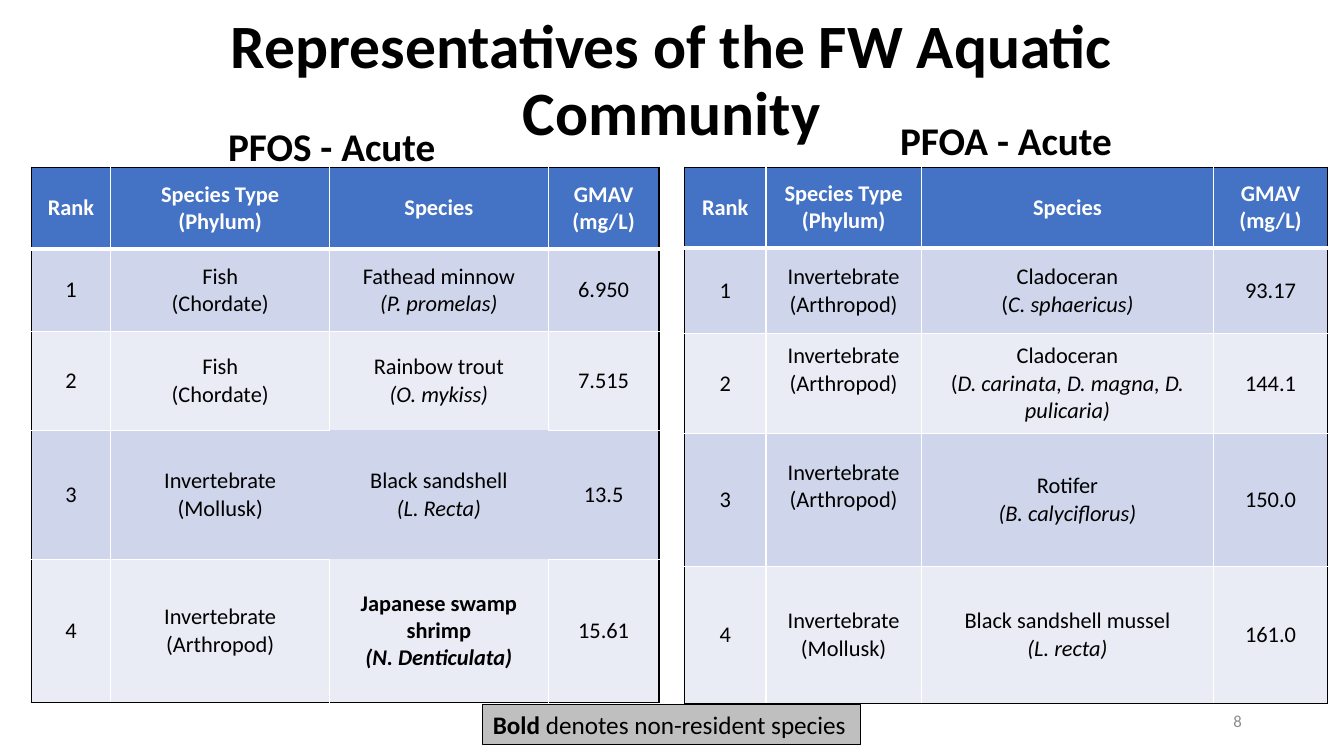
"""Build the slide comparing acute PFOS and PFOA values for freshwater species."""
from dataclasses import dataclass

from lxml import etree
from pptx import Presentation
from pptx.dml.color import RGBColor
from pptx.enum.shapes import MSO_SHAPE
from pptx.enum.text import MSO_ANCHOR, PP_ALIGN
from pptx.oxml.ns import qn
from pptx.util import Pt

LEFT, CENTER, RIGHT = PP_ALIGN.LEFT, PP_ALIGN.CENTER, PP_ALIGN.RIGHT
TOP, MIDDLE = MSO_ANCHOR.TOP, MSO_ANCHOR.MIDDLE
RECT = MSO_SHAPE.RECTANGLE


@dataclass(frozen=True)
class Theme:
    font: str = "Calibri"
    black: str = "000000"
    white: str = "FFFFFF"
    header: str = "4472C4"
    bands: tuple = ("E9EBF5", "CFD5EA")
    note: str = "BFBFBF"
    number: str = "8C8C8C"
    title_size: int = 44
    heading_size: int = 28
    note_size: int = 18
    cell_size: int = 16
    number_size: int = 12


THEME = Theme()

TITLE = [[("Representatives of the FW Aquatic Community", "b")]]
NOTE = [[("Bold ", "b"), ("denotes non-resident species", "")]]
PAGE = [[("8", "")]]
HEADER = [
    [[("Rank", "b")]],
    [[("Species Type", "b")], [("(Phylum)", "b")]],
    [[("Species", "b")]],
    [[("GMAV (mg/L)", "b")]],
]
FISH = [[("Fish", "")], [("(Chordate)", "")]]
ARTHROPOD = [[("Invertebrate (Arthropod)", "")]]
MOLLUSK = [[("Invertebrate (Mollusk)", "")]]

PANELS = [
    {
        "heading": [[("PFOS - Acute", "b")]],
        "heading_at": (103, 84.2),
        "left": 22.3,
        "cols": (56.9, 156.2, 156.2, 79.2),
        "heights": (58.3, 59, 70.6, 92.2, 102.2),
        "open_cell": (3, 2),
        "raised": (),
        "rows": [
            (FISH, [[("Fathead minnow", "")], [("(P. promelas)", "i")]], "6.950"),
            (FISH, [[("Rainbow trout", "")], [("(O. mykiss)", "i")]], "7.515"),
            (MOLLUSK, [[("Black sandshell", "")], [("(L. Recta)", "i")]], "13.5"),
            (ARTHROPOD, [[("Japanese swamp shrimp", "b")],
                         [("(N. Denticulata)", "bi")]], "15.61"),
        ],
    },
    {
        "heading": [[("PFOA - Acute", "b")]],
        "heading_at": (584.6, 79.2),
        "left": 488.9,
        "cols": (58.3, 110.9, 208.8, 81.4),
        "heights": (57.6, 61.2, 71.3, 95, 97.9),
        "open_cell": None,
        "raised": ((2, 1), (3, 1)),
        "rows": [
            (ARTHROPOD, [[("Cladoceran", "")],
                         [("(", ""), ("C. sphaericus)", "i")]], "93.17"),
            (ARTHROPOD, [[("Cladoceran", "")],
                         [("(", ""), ("D. carinata, D. magna, D. pulicaria)", "i")]], "144.1"),
            (ARTHROPOD, [[("Rotifer", "")], [("(B. calyciflorus)", "i")]], "150.0"),
            (MOLLUSK, [[("Black sandshell mussel", "")], [("(L. recta)", "i")]], "161.0"),
        ],
    },
]

TABLE_TOP = 119.5
SIDE_MARGIN = 8
RAISED_MARGIN = 23
SIDES = {"lnL": (0, -1), "lnR": (0, 1), "lnT": (-1, 0), "lnB": (1, 0)}


def rgb(color):
    return RGBColor.from_string(color)


def write(tf, lines, size, color=THEME.black, align=CENTER, spacing=None):
    for i, line in enumerate(lines):
        p = tf.paragraphs[0] if i == 0 else tf.add_paragraph()
        p.alignment = align
        if spacing:
            p.line_spacing = spacing
        for text, style in line:
            r = p.add_run()
            r.text = text
            r.font.name = THEME.font
            r.font.size = Pt(size)
            r.font.color.rgb = rgb(color)
            r.font.bold = "b" in style
            r.font.italic = "i" in style


def add_text(s, box, lines, size, anchor=TOP, **style):
    tf = s.shapes.add_textbox(*map(Pt, box)).text_frame
    tf.word_wrap = True
    tf.vertical_anchor = anchor
    write(tf, lines, size, **style)


def add_borders(cell, row, col, shape, open_cell):
    tc_pr = cell._tc.get_or_add_tcPr()
    for tag, (down, across) in SIDES.items():
        near = (row + down, col + across)
        inside = 0 <= near[0] < shape[0] and 0 <= near[1] < shape[1]
        under_header = {row, near[0]} == {0, 1}
        ln = etree.SubElement(tc_pr, qn(f"a:{tag}"), w=str(Pt(3 if under_header else 1)))
        if open_cell in ((row, col), near):
            etree.SubElement(ln, qn("a:noFill"))
        else:
            fill = etree.SubElement(ln, qn("a:solidFill"))
            etree.SubElement(fill, qn("a:srgbClr"), val=THEME.white if inside else THEME.black)


def add_panel(s, panel):
    cols, heights = panel["cols"], panel["heights"]
    shape = (len(heights), len(cols))
    table = s.shapes.add_table(*shape, Pt(panel["left"]), Pt(TABLE_TOP),
                               Pt(sum(cols)), Pt(sum(heights))).table
    for column, width in zip(table.columns, cols):
        column.width = Pt(width)
    for row, height in zip(table.rows, heights):
        row.height = Pt(height)
    body = [([[(str(rank), "")]], phylum, species, [[(gmav, "")]])
            for rank, (phylum, species, gmav) in enumerate(panel["rows"], 1)]
    for i, row in enumerate([HEADER, *body]):
        for j, lines in enumerate(row):
            cell = table.cell(i, j)
            add_borders(cell, i, j, shape, panel["open_cell"])
            cell.fill.solid()
            cell.fill.fore_color.rgb = rgb(THEME.bands[i % 2] if i else THEME.header)
            cell.vertical_anchor = MIDDLE
            cell.margin_left = cell.margin_right = Pt(SIDE_MARGIN)
            if (i, j) in panel["raised"]:
                cell.margin_bottom = Pt(RAISED_MARGIN)
            write(cell.text_frame, lines, THEME.cell_size, THEME.black if i else THEME.white)
    add_text(s, (*panel["heading_at"], 267.8, 41), panel["heading"], THEME.heading_size)


def add_note(s):
    sp = s.shapes.add_shape(RECT, Pt(344.9), Pt(503.3), Pt(270), Pt(28.8))
    sp.shadow.inherit = False
    sp.fill.solid()
    sp.fill.fore_color.rgb = rgb(THEME.note)
    sp.line.color.rgb = rgb(THEME.black)
    sp.line.width = Pt(0.75)
    tf = sp.text_frame
    tf.word_wrap = True
    tf.vertical_anchor = TOP
    write(tf, NOTE, THEME.note_size, align=LEFT)


def main():
    prs = Presentation()
    prs.slide_width, prs.slide_height = Pt(960), Pt(540)
    s = prs.slides.add_slide(prs.slide_layouts[6])
    add_text(s, (48, 6.5, 864, 104.4), TITLE, THEME.title_size, MIDDLE, spacing=0.9)
    for panel in PANELS:
        add_panel(s, panel)
    add_text(s, (678.2, 500.4, 216, 28.8), PAGE, THEME.number_size, MIDDLE,
             color=THEME.number, align=RIGHT)
    add_note(s)
    prs.save("out.pptx")


if __name__ == "__main__":
    main()
